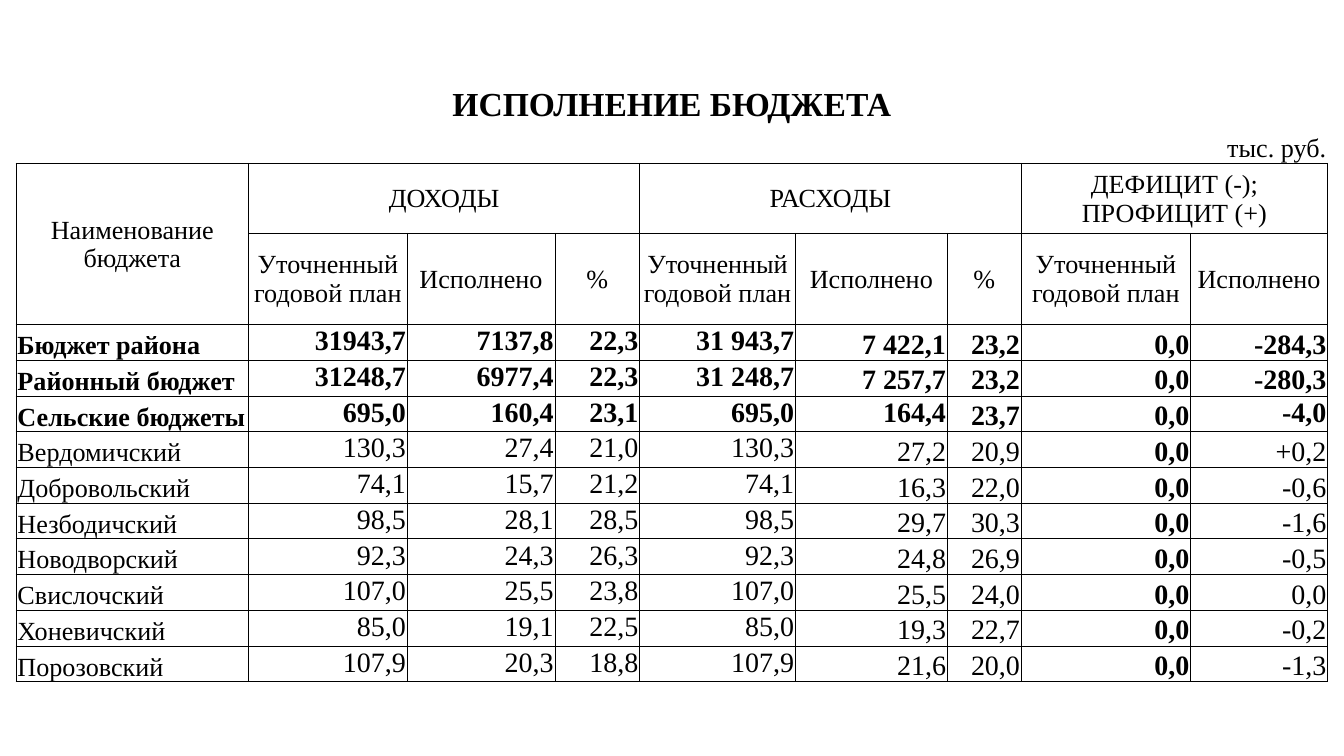
import pptx
import pptx.dml.color
import pptx.enum.text
import pptx.oxml
import pptx.oxml.ns
import pptx.util

Inches = pptx.util.Inches
ALIGN = pptx.enum.text.PP_ALIGN
ANCHOR = pptx.enum.text.MSO_ANCHOR

COLORS = {"text": "000000", "border": "000000"}
FONT = "Times New Roman"
SLIDE_WIDTH = 10
SLIDE_HEIGHT = SLIDE_WIDTH * 9 / 16
COLUMN_WIDTHS = [1.73, 1.01, 0.17, 0.73, 0.37, 0.63, 1.16, 0.9, 0.23, 0.55, 1.26, 0.12, 0.9]
BODY_ROW_HEIGHT = 2.66 / 10
HEADER_HEIGHTS = [0.34, BODY_ROW_HEIGHT, 0.52, 0.68]

# First and last grid column of each field
FIELDS = [(0, 0), (1, 2), (3, 4), (5, 5), (6, 6), (7, 8), (9, 9), (10, 10), (11, 12)]
UNIT_ROW_SPANS = [(2, 3), (4, 5), (8, 9), (10, 11)]
GROUPS = [("ДОХОДЫ", 1, 5), ("РАСХОДЫ", 6, 9), ("ДЕФИЦИТ (-); ПРОФИЦИТ (+)", 10, 12)]
PLAN, DONE, PERCENT = "Уточненный годовой план", "Исполнено", "%"
SUBHEADINGS = [PLAN, DONE, PERCENT, PLAN, DONE, PERCENT, PLAN, DONE]

BUDGETS = [
    ("Бюджет района", "31943,7", "7137,8", "22,3", "31 943,7", "7 422,1", "23,2", "0,0", "-284,3"),
    ("Районный бюджет", "31248,7", "6977,4", "22,3", "31 248,7", "7 257,7", "23,2", "0,0", "-280,3"),
    ("Сельские бюджеты", "695,0", "160,4", "23,1", "695,0", "164,4", "23,7", "0,0", "-4,0"),
    ("Вердомичский", "130,3", "27,4", "21,0", "130,3", "27,2", "20,9", "0,0", "+0,2"),
    ("Добровольский", "74,1", "15,7", "21,2", "74,1", "16,3", "22,0", "0,0", "-0,6"),
    ("Незбодичский", "98,5", "28,1", "28,5", "98,5", "29,7", "30,3", "0,0", "-1,6"),
    ("Новодворский", "92,3", "24,3", "26,3", "92,3", "24,8", "26,9", "0,0", "-0,5"),
    ("Свислочский", "107,0", "25,5", "23,8", "107,0", "25,5", "24,0", "0,0", "0,0"),
    ("Хоневичский", "85,0", "19,1", "22,5", "85,0", "19,3", "22,7", "0,0", "-0,2"),
    ("Порозовский", "107,9", "20,3", "18,8", "107,9", "21,6", "20,0", "0,0", "-1,3"),
]
SUMMARY_ROWS = 3
RURAL_ROW = 2
DEFICIT_PLAN_FIELD = 7
TOP_FIELDS = {1, 2, 3, 4}
RURAL_TOP_FIELDS = TOP_FIELDS | {5, 8}


def set_borders(cell, visible_sides):
    properties = cell._tc.get_or_add_tcPr()
    for side in "LRTB":
        if side in visible_sides:
            paint = f'<a:solidFill><a:srgbClr val="{COLORS["border"]}"/></a:solidFill>'
        else:
            paint = "<a:noFill/>"
        properties.append(pptx.oxml.parse_xml(
            f'<a:ln{side} w="{pptx.util.Pt(0.5)}" {pptx.oxml.ns.nsdecls("a")}>{paint}</a:ln{side}>'))


def write_cell(cell, text="", size=14, bold=False, align=ALIGN.CENTER, anchor=ANCHOR.MIDDLE):
    cell.text = text
    cell.vertical_anchor = anchor
    cell.margin_left = cell.margin_right = cell.margin_top = Inches(0.01)
    cell.margin_bottom = 0
    paragraph = cell.text_frame.paragraphs[0]
    paragraph.alignment = align
    paragraph.font.name = FONT
    paragraph.font.size = pptx.util.Pt(size)
    paragraph.font.bold = bold
    paragraph.font.color.rgb = pptx.dml.color.RGBColor.from_string(COLORS["text"])


def merge_columns(table, row, spans):
    for first, last in spans:
        if last > first:
            table.cell(row, first).merge(table.cell(row, last))


def prepare_grid(table):
    """Sizes, borders and blank formatting for every cell."""
    for column, width in zip(table.columns, COLUMN_WIDTHS):
        column.width = Inches(width)
    heights = HEADER_HEIGHTS + [BODY_ROW_HEIGHT] * len(BUDGETS)
    for index, (row, height) in enumerate(zip(table.rows, heights)):
        row.height = Inches(height)
        sides = {0: "", 1: "B"}.get(index, "LRTB")
        for cell in row.cells:
            set_borders(cell, sides)
            cell.fill.background()
            write_cell(cell)


def fill_heading(table):
    merge_columns(table, 0, [(0, len(COLUMN_WIDTHS) - 1)])
    write_cell(table.cell(0, 0), "ИСПОЛНЕНИЕ БЮДЖЕТА", size=18, bold=True)
    merge_columns(table, 1, UNIT_ROW_SPANS)
    write_cell(table.cell(1, len(COLUMN_WIDTHS) - 1), "тыс. руб.",
               align=ALIGN.RIGHT, anchor=ANCHOR.BOTTOM)
    table.cell(2, 0).merge(table.cell(3, 0))
    write_cell(table.cell(2, 0), "Наименование бюджета")
    for text, first, last in GROUPS:
        merge_columns(table, 2, [(first, last)])
        write_cell(table.cell(2, first), text)
    merge_columns(table, 3, FIELDS)
    for (first, _), text in zip(FIELDS[1:], SUBHEADINGS):
        write_cell(table.cell(3, first), text)


def fill_budgets(table):
    for index, budget in enumerate(BUDGETS):
        row = len(HEADER_HEIGHTS) + index
        merge_columns(table, row, FIELDS)
        top_fields = RURAL_TOP_FIELDS if index == RURAL_ROW else TOP_FIELDS
        for field, text in enumerate(budget):
            write_cell(
                table.cell(row, FIELDS[field][0]), text,
                size=15 if field else 14,
                bold=index < SUMMARY_ROWS or field == DEFICIT_PLAN_FIELD,
                align=ALIGN.RIGHT if field else ALIGN.LEFT,
                anchor=ANCHOR.TOP if field in top_fields else ANCHOR.BOTTOM)


def add_budget_table(slide, left, top, width, height):
    rows = len(HEADER_HEIGHTS) + len(BUDGETS)
    table = slide.shapes.add_table(
        rows, len(COLUMN_WIDTHS), Inches(left), Inches(top), Inches(width), Inches(height)).table
    table.first_row = False
    table.horz_banding = False
    prepare_grid(table)
    fill_heading(table)
    fill_budgets(table)


def main():
    presentation = pptx.Presentation()
    presentation.slide_width = Inches(SLIDE_WIDTH)
    presentation.slide_height = Inches(SLIDE_HEIGHT)
    slide = presentation.slides.add_slide(presentation.slide_layouts[6])
    add_budget_table(slide, 0.12, 0.61, 9.76, 4.47)
    presentation.save("out.pptx")


if __name__ == "__main__":
    main()
